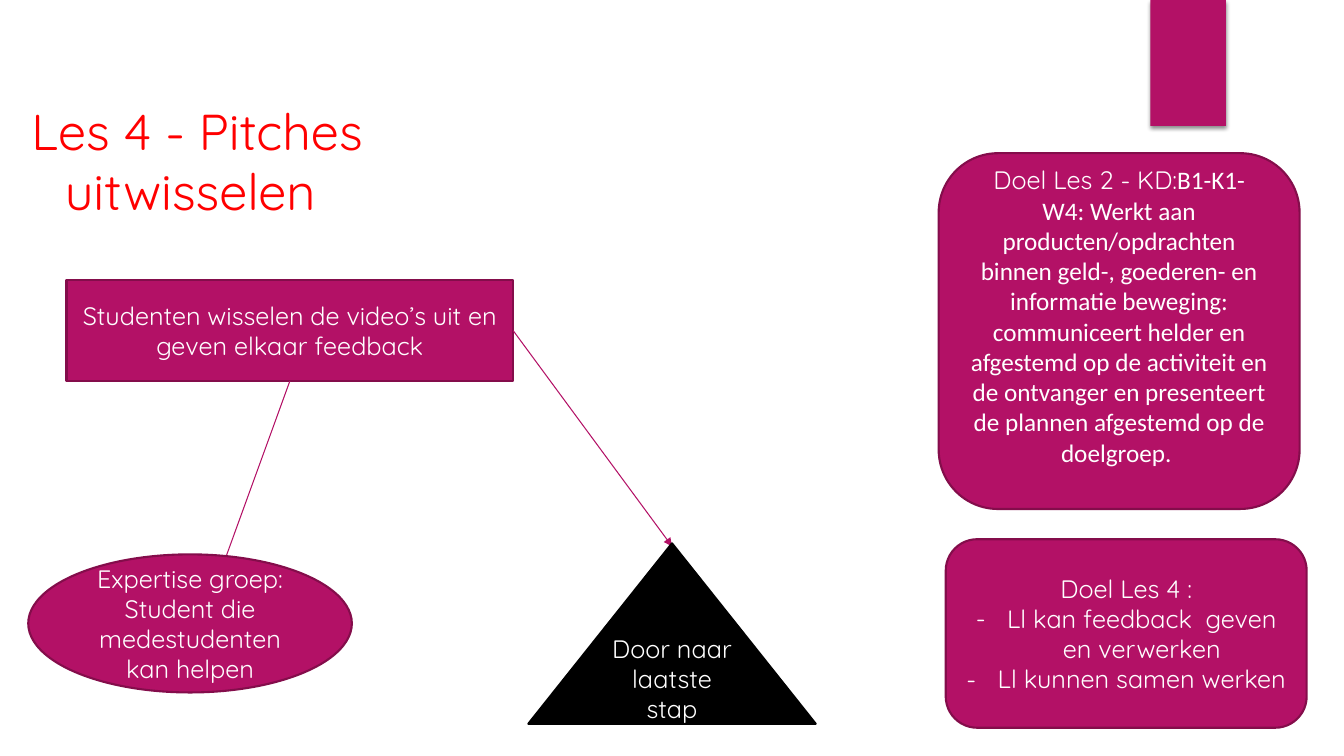
from lxml import etree
from pptx import Presentation
from pptx.dml.color import RGBColor
from pptx.enum import shapes, text
from pptx.oxml import parse_xml
from pptx.oxml.ns import nsdecls, qn
from pptx.util import Inches, Pt

COLORS = {"magenta": "B31166", "plum": "840D4B", "black": "000000",
          "white": "FFFFFF", "red": "FF0000"}
HEADING_FONT = "Quicksand"
BODY_FONT = "Calibri"
SHAPE = shapes.MSO_SHAPE


def rgb(name):
    return RGBColor.from_string(COLORS[name])


def format_run(run, size, color, font=HEADING_FONT):
    run.font.size = Pt(size)
    run.font.name = font
    run.font.color.rgb = rgb(color)


def add_box(slide, kind, box, fill="magenta", line="plum"):
    shape = slide.shapes.add_shape(kind, *map(Inches, box))
    shape.shadow.inherit = False
    shape.fill.solid()
    shape.fill.fore_color.rgb = rgb(fill)
    if line:
        shape.line.color.rgb = rgb(line)
        shape.line.width = Pt(1.5)
    else:
        shape.line.fill.background()
    return shape


def write_lines(shape, lines):
    """Fill a shape with centred paragraphs, each a list of (text, font) spans."""
    frame = shape.text_frame
    frame.word_wrap = True
    frame.vertical_anchor = text.MSO_ANCHOR.MIDDLE
    for index, spans in enumerate(lines):
        para = frame.paragraphs[0] if index == 0 else frame.add_paragraph()
        para.alignment = text.PP_ALIGN.CENTER
        for wording, font in spans:
            run = para.add_run()
            run.text = wording
            format_run(run, 18, "white", font)


def add_step(slide, kind, box, wording, **colors):
    step = add_box(slide, kind, box, **colors)
    write_lines(step, [[(wording, HEADING_FONT)]])


def add_arrow(slide, start, end):
    arrow = slide.shapes.add_connector(
        shapes.MSO_CONNECTOR.STRAIGHT, *map(Inches, start + end))
    arrow.line.color.rgb = rgb("magenta")
    arrow.line.width = Pt(0.75)
    etree.SubElement(arrow.line._get_or_add_ln(), qn("a:tailEnd"), type="triangle")
    etree.SubElement(arrow._element.spPr, qn("a:effectLst"))


def add_corner_tab(slide, box):
    tab = add_box(slide, SHAPE.RECTANGLE, box, line=None)
    effects = tab._element.spPr.find(qn("a:effectLst"))
    effects.append(parse_xml(
        f'<a:outerShdw {nsdecls("a")} blurRad="{Pt(3)}" dist="{Pt(2)}" dir="5400000" '
        f'rotWithShape="0"><a:srgbClr val="{COLORS["black"]}">'
        '<a:alpha val="45000"/></a:srgbClr></a:outerShdw>'))


def add_title(slide, box):
    title = slide.shapes.title
    title.left, title.top, title.width, title.height = map(Inches, box)
    frame = title.text_frame
    frame.text = "Les 4 - Pitches uitwisselen "
    frame.word_wrap = True
    frame.vertical_anchor = text.MSO_ANCHOR.MIDDLE
    para = frame.paragraphs[0]
    para.alignment = text.PP_ALIGN.CENTER
    format_run(para.runs[0], 36, "red")


def add_flow(slide, box):
    """Draw the exchange step and the two steps it leads to."""
    left, top, width, height = box
    bottom = top + height
    exchange = (left + 0.38, top, 4.43, 1)
    experts = (left, bottom - 1.68, 3.21, 1.37)
    final = (left + width - 2.85, bottom - 1.79, 2.85, 1.79)

    add_step(slide, SHAPE.RECTANGLE, exchange,
             "Studenten wisselen de video’s uit en geven elkaar feedback")
    add_arrow(slide, (exchange[0] + exchange[2] / 2, top + 1),
              (experts[0] + 1.93, experts[1] + 0.11))
    add_step(slide, SHAPE.OVAL, experts,
             "Expertise groep: Student die medestudenten kan helpen")
    add_arrow(slide, (exchange[0] + exchange[2], top + 0.5),
              (final[0] + final[2] / 2, final[1] + 0.03))
    add_step(slide, SHAPE.ISOSCELES_TRIANGLE, final, "Door naar laatste stap",
             fill="black", line="black")


def add_competence_goal(slide, box):
    goal = add_box(slide, SHAPE.ROUNDED_RECTANGLE, box)
    write_lines(goal, [[
        ("Doel Les 2 - KD:", HEADING_FONT),
        ("B1-K1-W4:\u00a0Werkt aan producten/opdrachten binnen geld-, goederen- en "
         "informatie beweging: communiceert helder en afgestemd op de activiteit en "
         "de ontvanger en presenteert de plannen afgestemd op de doelgroep. ",
         BODY_FONT)]])
    goal.text_frame.margin_bottom = Inches(0.35)


def add_lesson_goals(slide, box):
    goals = add_box(slide, SHAPE.ROUNDED_RECTANGLE, box)
    lines = ["Doel Les 4 :", "Ll kan feedback  geven en verwerken",
             "Ll kunnen samen werken"]
    write_lines(goals, [[(line, HEADING_FONT)] for line in lines])
    for para in goals.text_frame.paragraphs[1:]:
        properties = para._p.get_or_add_pPr()
        properties.set("marL", str(Inches(0.31)))
        properties.set("indent", str(-Inches(0.31)))
        etree.SubElement(properties, qn("a:buFont"), typeface=HEADING_FONT)
        etree.SubElement(properties, qn("a:buChar"), char="-")


def main():
    deck = Presentation()
    deck.slide_width, deck.slide_height = Inches(13.33), Inches(7.5)
    slide = deck.slides.add_slide(deck.slide_layouts[5])
    add_corner_tab(slide, (11.41, 0, 0.75, 1.25))
    add_title(slide, (0, 0.4, 3.91, 2.38))
    add_flow(slide, (0.28, 2.78, 7.81, 4.4))
    add_competence_goal(slide, (9.31, 1.52, 3.58, 3.53))
    add_lesson_goals(slide, (9.38, 5.35, 3.58, 1.87))
    deck.save("out.pptx")


if __name__ == "__main__":
    main()
